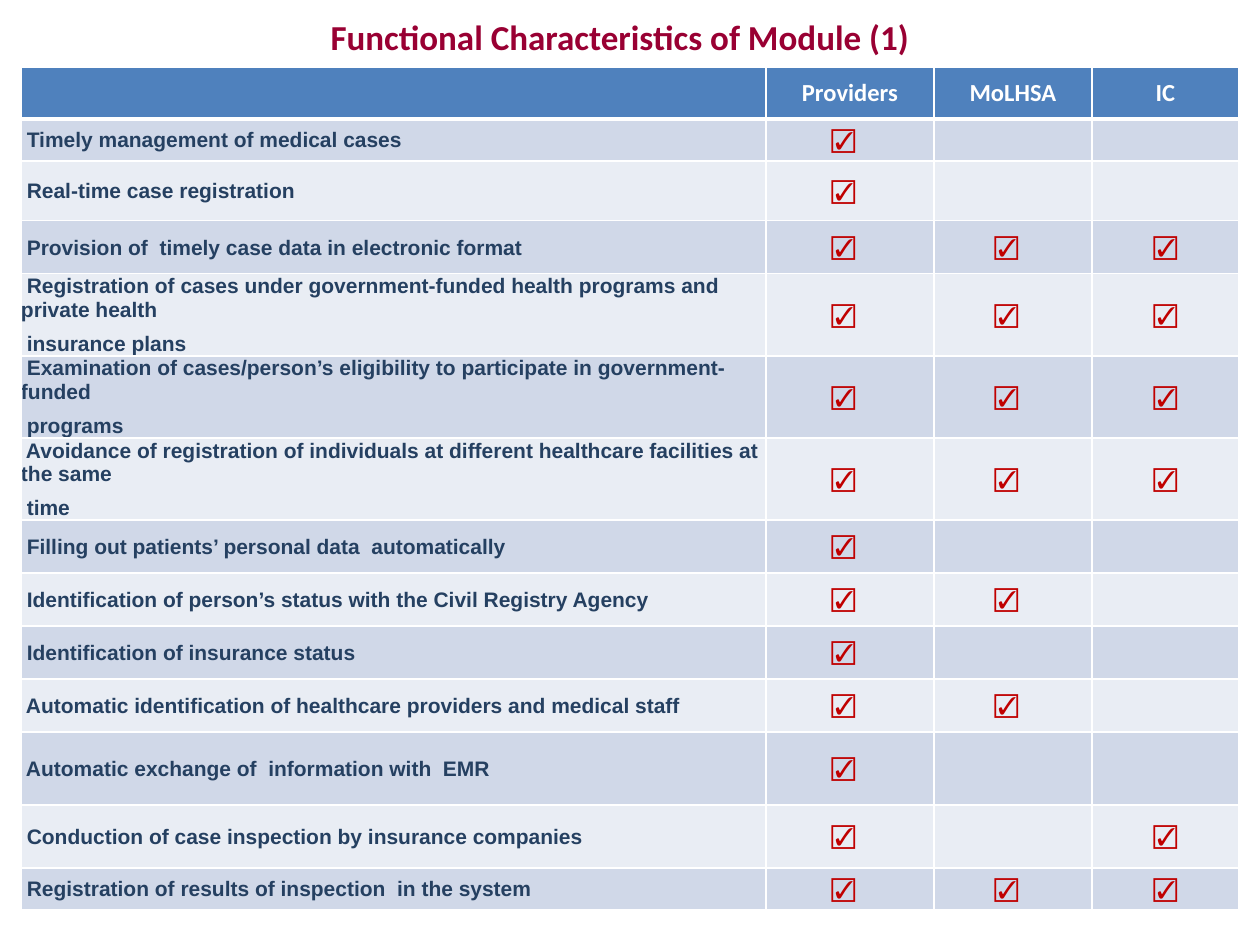
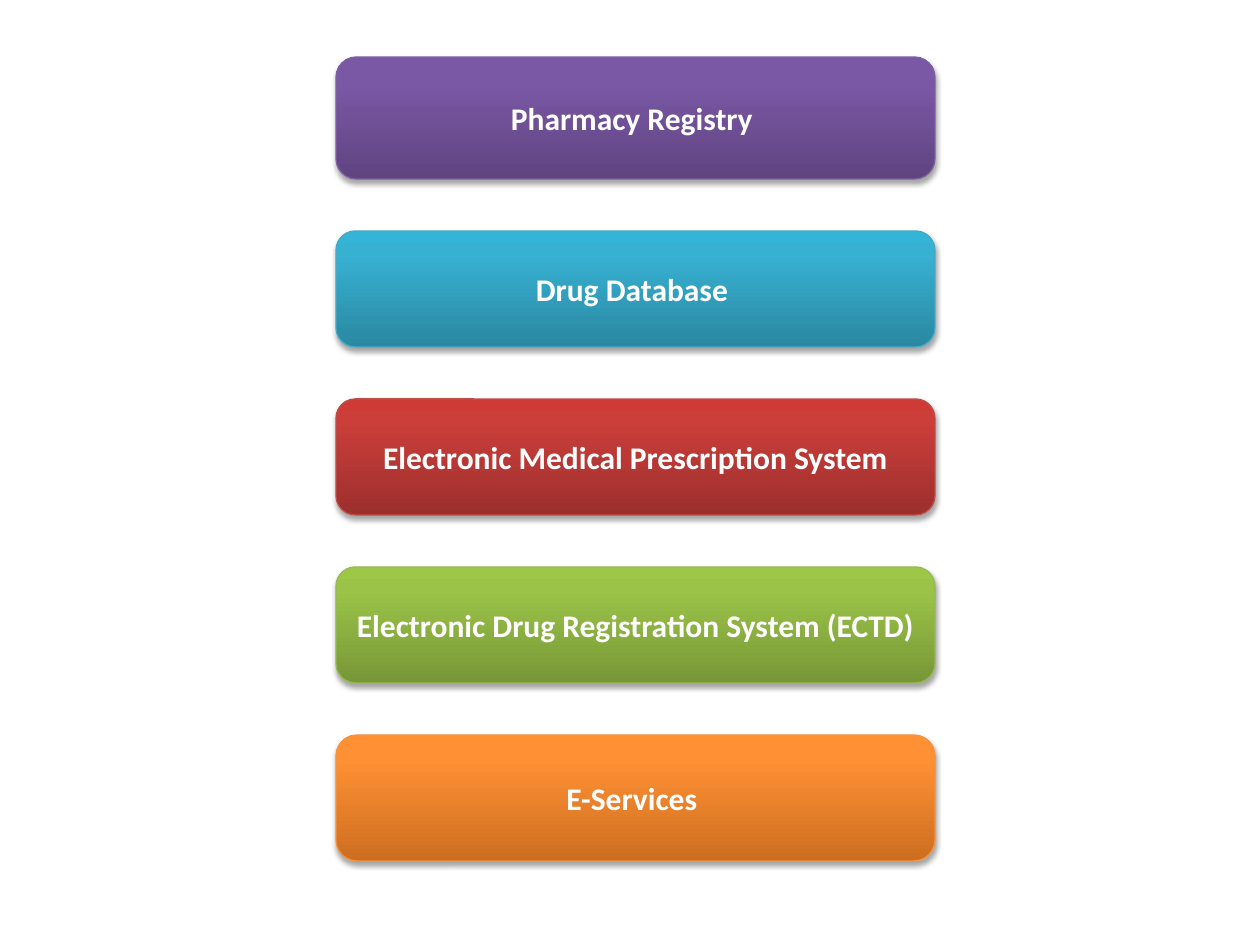
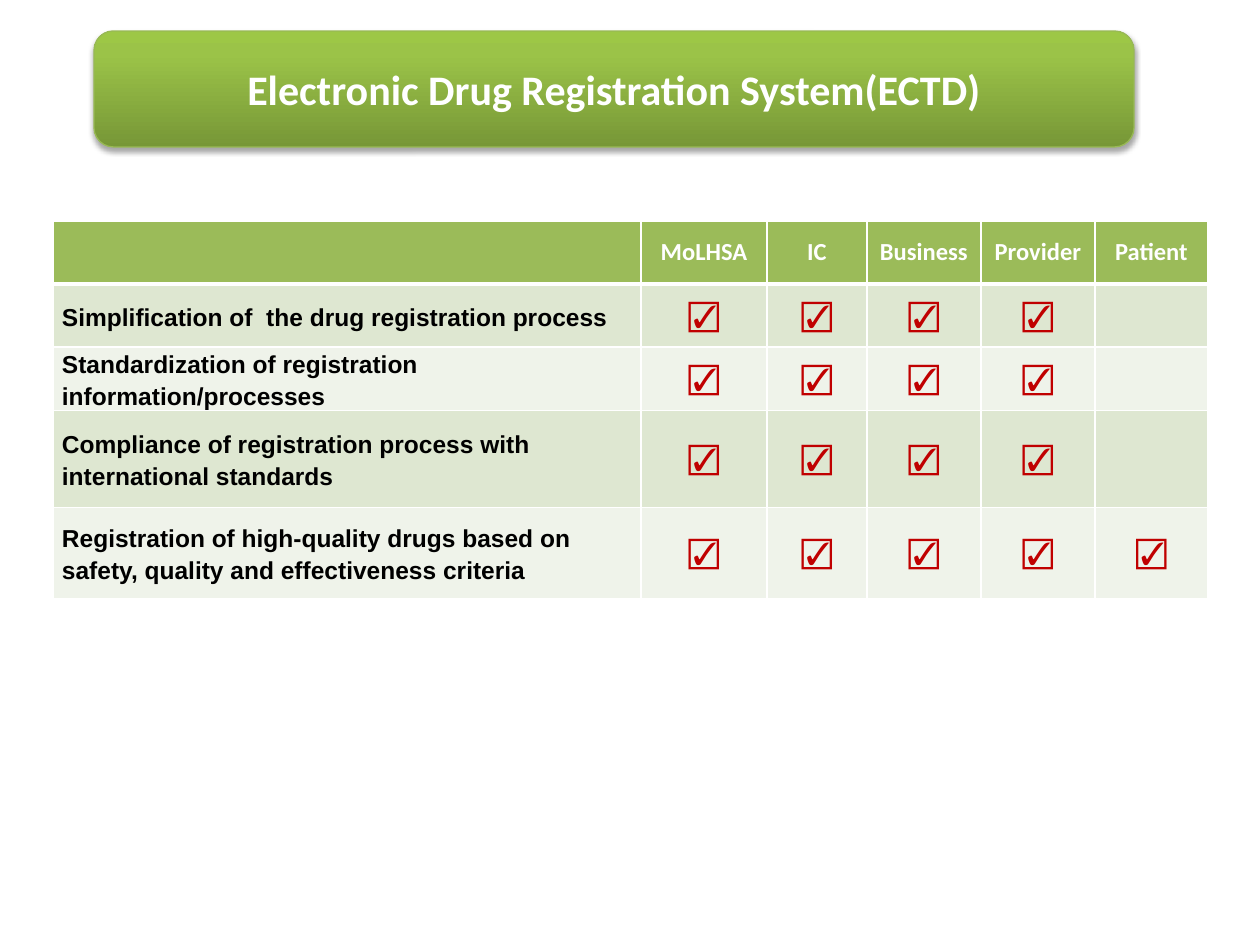
import copy
import pptx
import pptx.dml.color
import pptx.enum.shapes
import pptx.enum.text
import pptx.oxml
import pptx.oxml.ns
import pptx.util

qn = pptx.oxml.ns.qn
ALIGN = pptx.enum.text.PP_ALIGN
MIDDLE = pptx.enum.text.MSO_ANCHOR.MIDDLE
A_NS = pptx.oxml.ns.nsdecls("a")
TICK = "☑"
WHITE = "FFFFFF"
TICK_RED = "C00000"
TITLE_RED = "990033"
CELL_INSETS = (13, 6, 13, 6)
HEADER_INSETS = (11, 6, 11, 6)

PURPLE = ("5F4480", "7B58A6", "7C57A8", "7D60A0")
TEAL = ("2A88A2", "37B1D2", "34B4D6", "46AAC5")
RED = ("9C2F2D", "CB3E3A", "CE3B37", "BF4C48")
GREEN = ("779737", "9BC348", "9DC746", "98B955")
ORANGE = ("CC6E20", "FF9034", "FF9136", "F69240")

MODULE_TABLE = dict(
    header=["", "Providers", "MoLHSA", "IC"],
    rows=[
        (" Timely management of medical cases", "100"),
        (" Real-time case registration", "100"),
        (" Provision of  timely case data in electronic format", "111"),
        (" Registration of cases under government-funded health programs and private health\n insurance plans", "111"),
        (" Examination of cases/person’s eligibility to participate in government-funded\n programs", "111"),
        (" Avoidance of registration of individuals at different healthcare facilities at the same\n time", "111"),
        (" Filling out patients’ personal data  automatically", "100"),
        (" Identification of person’s status with the Civil Registry Agency", "110"),
        (" Identification of insurance status", "100"),
        (" Automatic identification of healthcare providers and medical staff", "110"),
        (" Automatic exchange of  information with  EMR", "100"),
        (" Conduction of case inspection by insurance companies", "101"),
        (" Registration of results of inspection  in the system", "111"),
    ],
    widths=[745, 168, 158, 147],
    heights=[52, 33, 60, 53, 63, 63, 73, 53, 53, 53, 53, 73, 63, 34],
    fills=("4F81BD", "D0D8E8", "E9EDF4"),
    label=dict(size=12, color="254061", name="Arial", before=6),
    tick=dict(size=14, color=TICK_RED, before=6),
    insets=[(0, 1, 1, 0), (0, 6, 13, 6), (0, 6, 13, 6), CELL_INSETS],
)

DRUG_TABLE = dict(
    header=["", "MoLHSA", "IC", "Business", "Provider", "Patient"],
    rows=[
        ("Simplification of  the drug registration process", "11110"),
        ("Standardization of registration information/processes", "11110"),
        ("Compliance of registration process with international standards", "11110"),
        ("Registration of high-quality drugs based on safety, quality and effectiveness criteria", "11111"),
    ],
    widths=[588, 126, 100, 114, 114, 113],
    heights=[63, 63, 63, 97, 91],
    fills=("9BBB59", "DEE7D1", "EFF3EA"),
    label=dict(size=14, color="000000", name="Arial", before=12, spacing=1.15),
    tick=dict(size=18, color=TICK_RED, bold=False),
    insets=[(9, 0, 9, 0)] + [CELL_INSETS] * 5,
)


def px(n):
    return pptx.util.Emu(round(n * 914400 / 126))


def rgb(color):
    return pptx.dml.color.RGBColor.from_string(color)


class Deck:
    def __init__(self):
        self.prs = pptx.Presentation()
        self.prs.slide_width, self.prs.slide_height = px(1260), px(945)
        self.s = None

    def slide(self, layout):
        self.s = self.prs.slides.add_slide(self.prs.slide_layouts[layout])

    def text(self, tf, text, size, color, name="Calibri", bold=True,
             align=ALIGN.CENTER, before=0, spacing=None):
        tf.text = text
        for p in tf.paragraphs:
            p.alignment = align
            p.space_before = pptx.util.Pt(before)
            p.line_spacing = spacing
            f = p.font
            f.size, f.name, f.bold = pptx.util.Pt(size), name, bold
            f.color.rgb = rgb(color)

    def title(self, text, x, y, w, h):
        sp = self.s.shapes.title
        sp.left, sp.top, sp.width, sp.height = px(x), px(y), px(w), px(h)
        sp.text_frame.vertical_anchor = MIDDLE
        self.text(sp.text_frame, text, 20, TITLE_RED)

    def banner(self, text, x, y, w, h, colors, size):
        sp = self.s.shapes.add_shape(
            pptx.enum.shapes.MSO_SHAPE.ROUNDED_RECTANGLE, px(x), px(y), px(w), px(h))
        sp.fill.gradient()
        sp.fill.gradient_angle = 90
        stops = sp._element.spPr.find(qn("a:gradFill")).find(qn("a:gsLst"))
        stops.append(copy.deepcopy(stops[-1]))
        for stop, pos, color in zip(sp.fill.gradient_stops, (0, 0.8, 1), colors):
            stop.position = pos
            stop.color.rgb = rgb(color)
        sp.line.color.rgb = rgb(colors[3])
        sp.line.width = pptx.util.Pt(0.75)
        sp.shadow.inherit = False
        sp._element.spPr.find(qn("a:effectLst")).append(pptx.oxml.parse_xml(
            f'<a:outerShdw {A_NS} blurRad="39370" dist="22860" dir="5400000" rotWithShape="0">'
            '<a:srgbClr val="000000"><a:alpha val="35000"/></a:srgbClr></a:outerShdw>'))
        sp.text_frame.vertical_anchor = MIDDLE
        self.text(sp.text_frame, text, size, WHITE)

    def borders(self, cell, top, bottom):
        tcPr = cell._tc.get_or_add_tcPr()
        for i, (side, width) in enumerate(zip("LRTB", (1, 1, top, bottom))):
            tcPr.insert(i, pptx.oxml.parse_xml(
                f'<a:ln{side} {A_NS} w="{width * 12700}"><a:solidFill>'
                f'<a:srgbClr val="{WHITE}"/></a:solidFill></a:ln{side}>'))

    def cell(self, cell, text, fill, insets, style, top=1, bottom=1):
        cell.fill.solid()
        cell.fill.fore_color.rgb = rgb(fill)
        self.borders(cell, top, bottom)
        cell.vertical_anchor = MIDDLE
        (cell.margin_left, cell.margin_top,
         cell.margin_right, cell.margin_bottom) = map(px, insets)
        self.text(cell.text_frame, text, **style)

    def table(self, x, y, h, header, rows, widths, heights, fills, label, tick, insets):
        table = self.s.shapes.add_table(
            len(heights), len(widths), px(x), px(y), px(sum(widths)), px(h)).table
        for col, width in zip(table.columns, widths):
            col.width = px(width)
        for row, height in zip(table.rows, heights):
            row.height = px(height)
        for c, text in enumerate(header):
            self.cell(table.cell(0, c), text, fills[0], HEADER_INSETS,
                      dict(size=14, color=WHITE), bottom=3)
        for r, (text, flags) in enumerate(rows, 1):
            texts = [text] + [TICK if flag == "1" else "" for flag in flags]
            for c, value in enumerate(texts):
                style = tick if c else dict(label, align=ALIGN.LEFT)
                self.cell(table.cell(r, c), value, fills[2 - r % 2], insets[c],
                          style, top=3 if r == 1 else 1)


def main():
    d = Deck()
    d.slide(5)
    d.title("Functional Characteristics of Module (1)", 53, 0, 1134, 73)
    d.table(21, 67, 794, **MODULE_TABLE)

    d.slide(6)
    y = 57
    for text, h, colors in [
        ("Pharmacy Registry ", 122, PURPLE),
        ("Drug Database ", 116, TEAL),
        ("Electronic Medical Prescription System", 116, RED),
        ("Electronic Drug Registration System (ECTD)", 116, GREEN),
        ("E-Services ", 126, ORANGE),
    ]:
        d.banner(text, 336, y, 599, h, colors, 18)
        y += h + 52

    d.slide(6)
    d.table(53, 221, 378, **DRUG_TABLE)
    d.banner("Electronic Drug Registration System(ECTD)", 94, 31, 1040, 116, GREEN, 24)

    d.prs.save("out.pptx")


if __name__ == "__main__":
    main()
